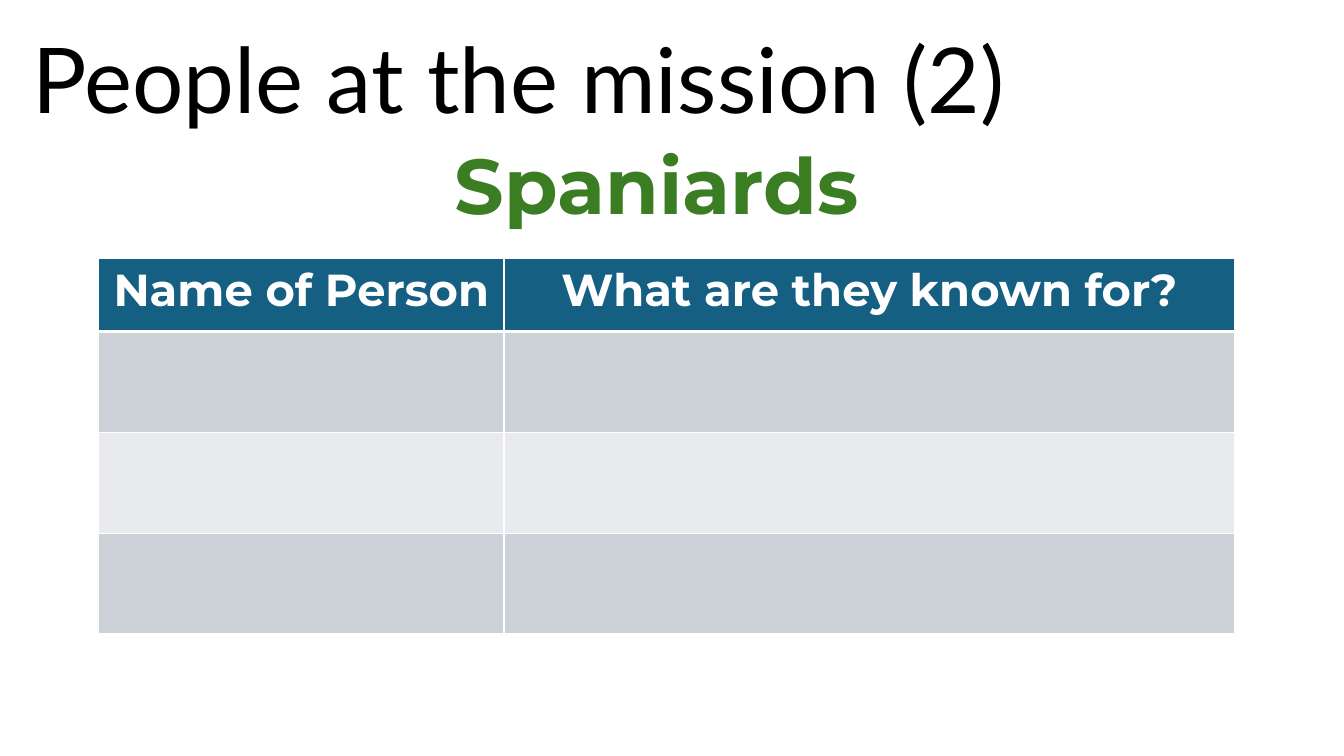
from lxml import etree
from pptx import Presentation
from pptx.dml.color import RGBColor
from pptx.enum.text import MSO_ANCHOR, PP_ALIGN
from pptx.oxml.ns import qn
from pptx.util import Inches, Pt

LEFT, CENTER = PP_ALIGN.LEFT, PP_ALIGN.CENTER
MIDDLE, BOTTOM = MSO_ANCHOR.MIDDLE, MSO_ANCHOR.BOTTOM
COLORS = {"black": "000000", "green": "3B7D23", "white": "FFFFFF",
          "blue": "156082", "dark": "CCD2D8", "light": "E8EAED"}

deck = Presentation()
deck.slide_width, deck.slide_height = Inches(13.33), Inches(7.5)
slide = deck.slides.add_slide(deck.slide_layouts[6])


def write(para, text, font, size, color, bold, align):
    para.alignment = align
    run = para.add_run()
    run.text = text
    run.font.name, run.font.size, run.font.bold = font, Pt(size), bold
    run.font.color.rgb = RGBColor.from_string(COLORS[color])


def edge(cell, side, width):
    line = etree.SubElement(cell._tc.get_or_add_tcPr(), qn("a:" + side), w=str(Pt(width)))
    fill = etree.SubElement(line, qn("a:solidFill"))
    etree.SubElement(fill, qn("a:srgbClr"), val=COLORS["white"])


# Title and heading
heads = [
    ((0.22, 0.11, 12.94, 1.45), MIDDLE, 0.9, 0,
     ("People at the mission (2)", "Lato", 64.8, "black", False, LEFT)),
    ((3.68, 1.43, 5.67, 0.9), BOTTOM, 0.8, 10,
     ("Spaniards", "Montserrat", 55.5, "green", True, CENTER)),
]
for box, anchor, spacing, before, style in heads:
    frame = slide.shapes.add_textbox(*map(Inches, box)).text_frame
    frame.word_wrap = True
    frame.vertical_anchor = anchor
    para = frame.paragraphs[0]
    para.line_spacing, para.space_before = spacing, Pt(before)
    write(para, *style)

# Table of people
widths, heights = [4.02, 7.25], [0.73, 1, 1, 1]
table = slide.shapes.add_table(
    len(heights), len(widths), Inches(0.98), Inches(2.56),
    Inches(sum(widths)), Inches(sum(heights))).table
for column, width in zip(table.columns, widths):
    column.width = Inches(width)
for row, height in zip(table.rows, heights):
    row.height = Inches(height)

# Borders come before the fill in each cell
for r, shade in enumerate(["blue", "dark", "light", "dark"]):
    for cell in table.rows[r].cells:
        for side in ("lnL", "lnR", "lnT", "lnB"):
            thick = (r, side) in [(0, "lnB"), (1, "lnT")]
            edge(cell, side, 3 if thick else 1)
        cell.fill.solid()
        cell.fill.fore_color.rgb = RGBColor.from_string(COLORS[shade])

# Column headings
for cell, text in zip(table.rows[0].cells, ["Name of Person", "What are they known for?"]):
    write(cell.text_frame.paragraphs[0], text, "Montserrat", 32, "white", True, CENTER)

deck.save("out.pptx")
